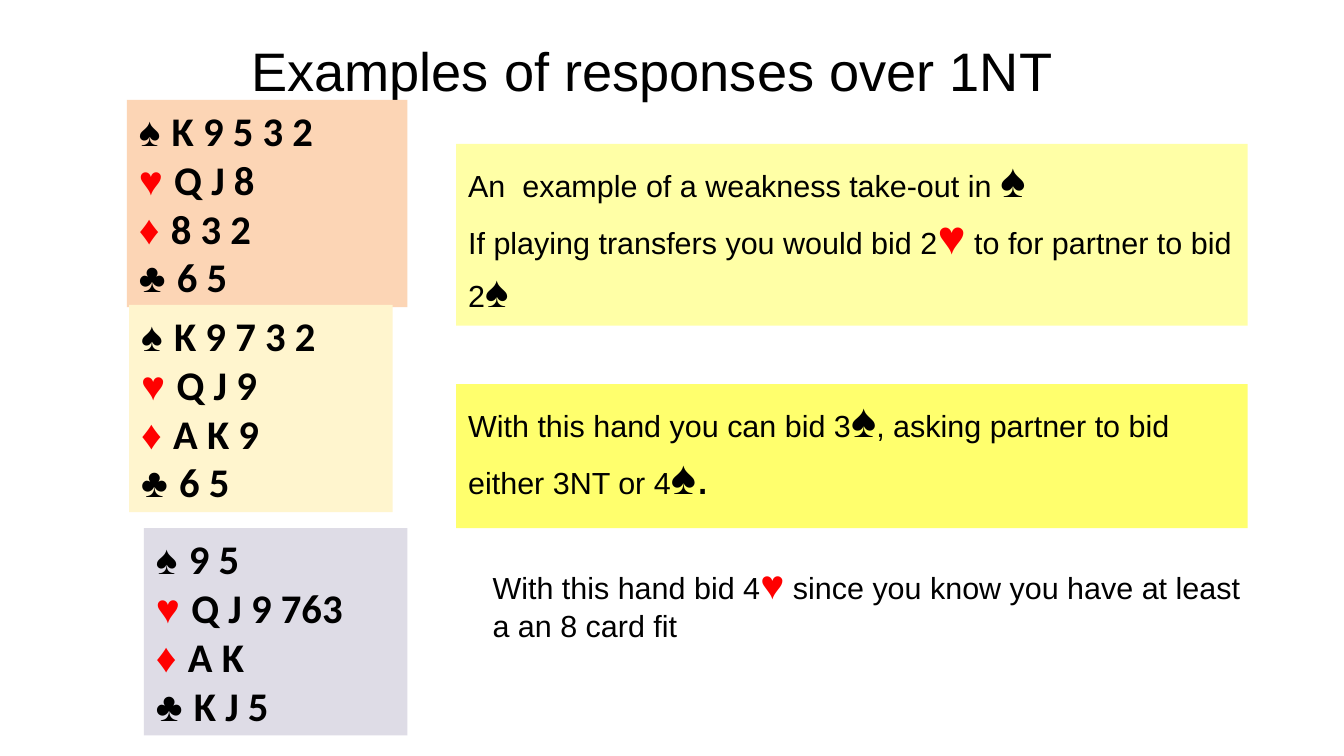
import pptx
import pptx.util
import pptx.dml.color
import pptx.enum.shapes
import pptx.enum.text

Pt = pptx.util.Pt
BLACK, RED = "000000", "FF0000"
SUITS = "♠♥♦♣"


def color(hex_code):
    return pptx.dml.color.RGBColor.from_string(hex_code)


def add_block(left, top, width, height, fill, lines):
    box = [Pt(v) for v in (left, top, width, height)]
    if fill:
        block = slide.shapes.add_shape(pptx.enum.shapes.MSO_SHAPE.RECTANGLE, *box)
        block.shadow.inherit = False
        block.fill.solid()
        block.fill.fore_color.rgb = color(fill)
        block.line.fill.background()
    else:
        block = slide.shapes.add_textbox(*box)
    frame = block.text_frame
    frame.word_wrap = True
    frame.vertical_anchor = pptx.enum.text.MSO_ANCHOR.TOP
    for index, pieces in enumerate(lines):
        paragraph = frame.add_paragraph() if index else frame.paragraphs[0]
        paragraph.alignment = pptx.enum.text.PP_ALIGN.LEFT
        for text, size, font, bold in pieces:
            run = paragraph.add_run()
            run.text = text
            run.font.size = Pt(size)
            run.font.name = font
            run.font.bold = bold
            run.font.color.rgb = color(RED if text[0] in "♥♦" else BLACK)
    return frame


deck = pptx.Presentation()
deck.slide_width, deck.slide_height = Pt(793.44), Pt(446.4)
slide = deck.slides.add_slide(deck.slide_layouts[6])

title = add_block(28, 10.8, 714.2, 60.5, None,
                  [[("Examples of responses over 1NT", 32, "Arial", False)]])
title.margin_left = title.margin_right = title.margin_top = title.margin_bottom = 0
title.vertical_anchor = pptx.enum.text.MSO_ANCHOR.MIDDLE
title.paragraphs[0].alignment = pptx.enum.text.PP_ALIGN.CENTER

hands = [
    (74.9, 59, 165.6, "FCD5B5", ["K 9 5 3 2", "Q J 8", "8 3 2", "6 5"]),
    (76.3, 180, 155.5, "FFF5CE", ["K 9 7 3 2", "Q J 9", "A K 9", "6 5"]),
    (85, 311.8, 155.5, "DEDCE6", ["9 5", "Q J 9 763", "A K", "K J 5"]),
]
for left, top, width, fill, holdings in hands:
    add_block(left, top, width, 122.4, fill, [
        [(suit + " ", 24, "Arial", suit != "♠"), (cards, 24, "Calibri", True)]
        for suit, cards in zip(SUITS, holdings)
    ])

advice = [
    (269.3, 85, 107.3, "FFFFA6", [
        [("An  example of a weakness take-out in ", 18), ("♠", 28)],
        [("If playing transfers you would bid 2", 18), ("♥", 28),
         (" to for partner to bid 2", 18), ("♠", 26)],
    ]),
    (269.3, 226.8, 85, "FFFF6D", [
        [("With this hand you can bid 3", 18), ("♠", 28),
         (", asking partner to bid either 3NT or 4", 18), ("♠.", 28)],
    ]),
    (283.7, 326.2, 56.9, None, [
        [("With this hand bid 4", 18), ("♥", 24),
         (" since you know you have at least a an 8 card fit", 18)],
    ]),
]
for left, top, height, fill, lines in advice:
    add_block(left, top, 467.3, height, fill, [
        [(text, size, "Arial", text == "♥") for text, size in pieces]
        for pieces in lines
    ])

deck.save("out.pptx")
